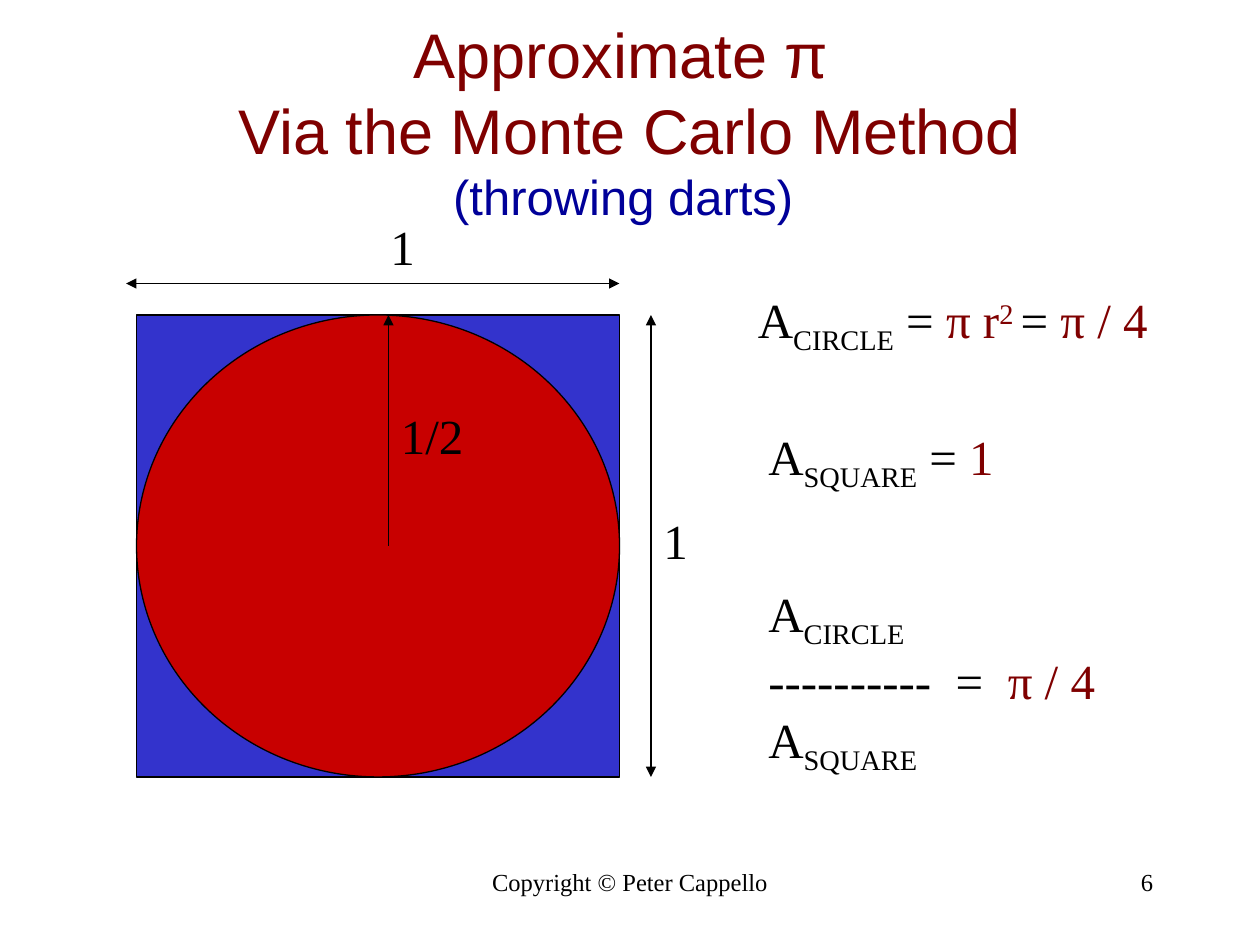
from dataclasses import dataclass
from typing import Any

from pptx import Presentation
from pptx.dml import color
from pptx.enum import shapes, text
from pptx.oxml import ns
from pptx.util import Emu, Inches, Pt
from lxml import etree

COLS, ROWS = 120, 90
BLACK, WINE, NAVY = "000000", "7F0000", "000099"
SUB, SUP = -25000, 30000
SERIF = "Times New Roman"

deck = Presentation()
deck.slide_width, deck.slide_height = Inches(10), Inches(7.5)
slide = deck.slides.add_slide(deck.slide_layouts[6])


@dataclass
class Run:
    words: str
    hue: str = BLACK
    base: int = 0
    size: int = 28
    font: str = SERIF


@dataclass
class Label:
    col: float
    row: float
    wide: float
    high: float
    lines: list[list[Run]]
    align: Any = text.PP_ALIGN.LEFT
    anchor: Any = text.MSO_ANCHOR.TOP
    wrap: bool = False


@dataclass
class Arrow:
    start: tuple[int, int]
    end: tuple[int, int]
    ends: tuple[str, ...]


def across(col: float) -> Emu:
    return Emu(round(deck.slide_width * col / COLS))


def down(row: float) -> Emu:
    return Emu(round(deck.slide_height * row / ROWS))


def paint(target: Any, hue: str) -> None:
    target.rgb = color.RGBColor.from_string(hue)


def style(item: Any, values: dict[str, Any]) -> None:
    for name, value in values.items():
        setattr(item, name, value)


def write(para: Any, run: Run) -> None:
    for place, part in enumerate(run.words.split("\n")):
        if place:
            para.add_line_break()
        if part:
            piece = para.add_run()
            piece.text = part
            style(piece.font, {"name": run.font, "size": Pt(run.size)})
            paint(piece.font.color, run.hue)
            if run.base:
                piece.font._element.set("baseline", str(run.base))


def draw_label(label: Label) -> None:
    box = slide.shapes.add_textbox(
        across(label.col), down(label.row), across(label.wide), down(label.high))
    frame = box.text_frame
    style(frame, {"word_wrap": label.wrap, "vertical_anchor": label.anchor})
    for place, runs in enumerate(label.lines):
        para = frame.add_paragraph() if place else frame.paragraphs[0]
        para.alignment = label.align
        for run in runs:
            write(para, run)


def draw_shape(kind: Any, hue: str) -> None:
    shape = slide.shapes.add_shape(
        kind, across(13), down(30), across(46), down(44))
    shape.shadow.inherit = False
    shape.fill.solid()
    paint(shape.fill.fore_color, hue)
    shape.line.width = Pt(0.75)
    paint(shape.line.color, BLACK)


def draw_arrow(arrow: Arrow) -> None:
    (left, top), (right, low) = arrow.start, arrow.end
    line = slide.shapes.add_connector(
        shapes.MSO_CONNECTOR.STRAIGHT,
        across(left), down(top), across(right), down(low))
    line.line.width = Pt(0.75)
    paint(line.line.color, BLACK)
    stroke = line.line._get_or_add_ln()
    for end in arrow.ends:
        etree.SubElement(stroke, ns.qn(f"a:{end}"), type="triangle")
    etree.SubElement(line._element.spPr, ns.qn("a:effectLst"))


def area(name: str) -> list[Run]:
    return [Run("A"), Run(name, base=SUB)]


BOTH = ("headEnd", "tailEnd")
ARROWS = [
    Arrow((12, 27), (59, 27), BOTH),
    Arrow((62, 30), (62, 74), BOTH),
    Arrow((37, 52), (37, 30), ("tailEnd",)),
]
MID, RIGHT = text.PP_ALIGN.CENTER, text.PP_ALIGN.RIGHT
RATIO = Run("π / 4", WINE)
LABELS = [
    Label(41, 82, 38, 6, [[Run("Copyright © Peter Cappello", size=14)]],
          MID, wrap=True),
    Label(86, 82, 25, 6, [[Run("6", size=14)]], RIGHT, wrap=True),
    Label(9, 4, 102, 15, [[
        Run("Approximate π \nVia the Monte Carlo Method\n", WINE, 0, 36, "Arial"),
        Run("(throwing darts) ", NAVY, font="Arial")]],
        MID, text.MSO_ANCHOR.MIDDLE, True),
    Label(36, 20, 4.8, 6.8, [[Run("1")]]),
    Label(62, 48, 4.8, 6.8, [[Run("1")]]),
    Label(37, 38, 8.4, 6.8, [[Run("1/2")]]),
    Label(71, 27, 44, 6.8, [area("CIRCLE") + [
        Run(" = "), Run("π r", WINE), Run("2 ", WINE, SUP), Run("= "), RATIO]],
        wrap=True),
    Label(72, 40, 25.8, 6.8, [area("SQUARE") + [Run(" = "), Run("1", WINE)]]),
    Label(72, 55, 33.6, 18, [
        area("CIRCLE"), [Run("----------  =  "), RATIO], area("SQUARE")]),
]

draw_shape(shapes.MSO_SHAPE.RECTANGLE, "3333CC")
draw_shape(shapes.MSO_SHAPE.OVAL, "C80000")
for arrow in ARROWS:
    draw_arrow(arrow)
for label in LABELS:
    draw_label(label)

deck.save("out.pptx")
